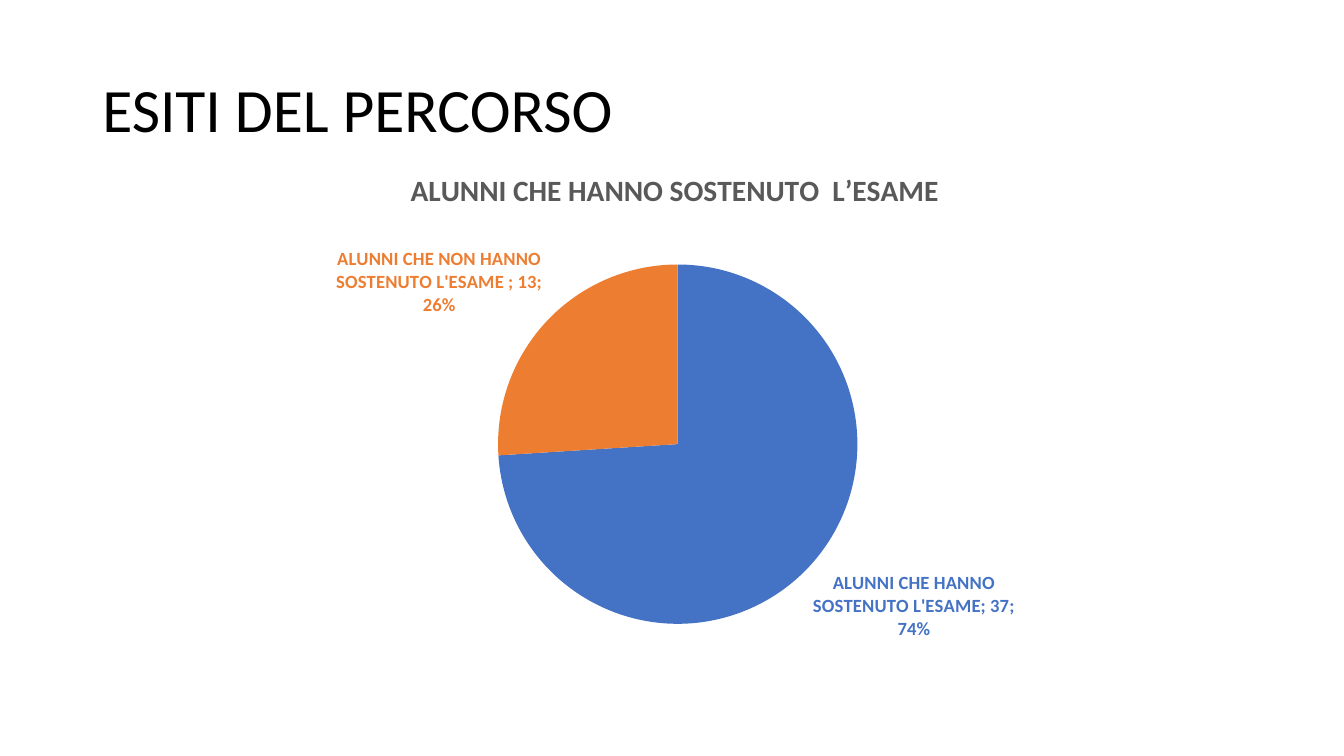
from dataclasses import dataclass

from lxml import etree
from pptx import Presentation
from pptx import util as u
from pptx.chart.data import CategoryChartData
from pptx.dml.color import RGBColor
from pptx.enum import chart as charts, text
from pptx.oxml.ns import qn

PX = 9525
FONT = "Calibri"


@dataclass
class Outcome:
    category: str
    pupils: int
    color: str


@dataclass
class Box:
    left: int
    top: int
    width: int
    height: int

    def emu(self) -> list[int]:
        return [side * PX for side in (self.left, self.top, self.width, self.height)]


OUTCOMES = [
    Outcome("ALUNNI CHE HANNO SOSTENUTO L'ESAME", 37, "4472C4"),
    Outcome("ALUNNI CHE NON HANNO SOSTENUTO L'ESAME ", 13, "ED7D31"),
]
HEADING = Box(88, 38, 1104, 139)
EXAM = Box(88, 131, 1104, 517)


def rgb(value: str) -> RGBColor:
    return RGBColor.from_string(value)


def style_font(font, size: float, color: str, bold: bool) -> None:
    for name, value in {"name": FONT, "size": u.Pt(size), "bold": bold}.items():
        setattr(font, name, value)
    font.color.rgb = rgb(color)


def place(parent, index: int, values: dict[str, str | float]) -> None:
    for previous in parent.findall(qn("c:layout")):
        parent.remove(previous)
    layout = etree.Element(qn("c:layout"))
    manual = etree.SubElement(layout, qn("c:manualLayout"))
    for tag, value in values.items():
        etree.SubElement(manual, qn(f"c:{tag}")).set("val", str(value))
    parent.insert(index, layout)


def add_heading(slide, box: Box, wording: str) -> None:
    frame = slide.shapes.add_textbox(*box.emu()).text_frame
    frame.word_wrap = True
    frame.vertical_anchor = text.MSO_ANCHOR.MIDDLE
    heading = frame.paragraphs[0]
    heading.line_spacing = 0.9
    run = heading.add_run()
    run.text = wording
    style_font(run.font, 44, "000000", False)


def style_outcome(point, outcome: Outcome) -> None:
    point.format.fill.solid()
    point.format.fill.fore_color.rgb = rgb(outcome.color)
    point.format.line.fill.background()
    style_font(point.data_label.font, 13.3, outcome.color, True)
    point.data_label.position = charts.XL_LABEL_POSITION.OUTSIDE_END


def add_exam_chart(slide, box: Box, wording: str, outcomes: list[Outcome]) -> None:
    data = CategoryChartData()
    data.categories = [outcome.category for outcome in outcomes]
    data.add_series("Series 1", [outcome.pupils for outcome in outcomes])
    exam = slide.shapes.add_chart(charts.XL_CHART_TYPE.PIE, *box.emu(), data).chart
    exam.has_legend = False
    style_font(exam.font, 10, "000000", False)

    title = exam.chart_title
    run = title.text_frame.paragraphs[0].add_run()
    run.text = wording
    style_font(run.font, 21, "595959", True)
    edges = {"xMode": "edge", "yMode": "edge"}
    place(title._element, 1, edges | {"x": 0.27, "y": 0.05})

    pie = exam.plots[0]
    pie.vary_by_categories = True
    for index, outcome in enumerate(outcomes):
        style_outcome(pie.series[0].points[index], outcome)
    for label in pie._element.iter(qn("c:dLbl")):
        for tag in ("showCatName", "showPercent", "showVal"):
            label.find(qn(f"c:{tag}")).set("val", "1")
        etree.SubElement(label, qn("c:separator")).text = "; "

    plot_area = pie._element.getparent()
    target = {"layoutTarget": "inner"}
    place(plot_area, 0, target | edges | {"x": 0.35, "y": 0.23, "w": 0.31, "h": 0.67})


def main() -> None:
    deck = Presentation()
    deck.slide_width, deck.slide_height = 1280 * PX, 720 * PX
    slide = deck.slides.add_slide(deck.slide_layouts[6])
    add_heading(slide, HEADING, "ESITI DEL PERCORSO")
    add_exam_chart(slide, EXAM, "ALUNNI CHE HANNO SOSTENUTO  L’ESAME", OUTCOMES)
    deck.save("out.pptx")


if __name__ == "__main__":
    main()
